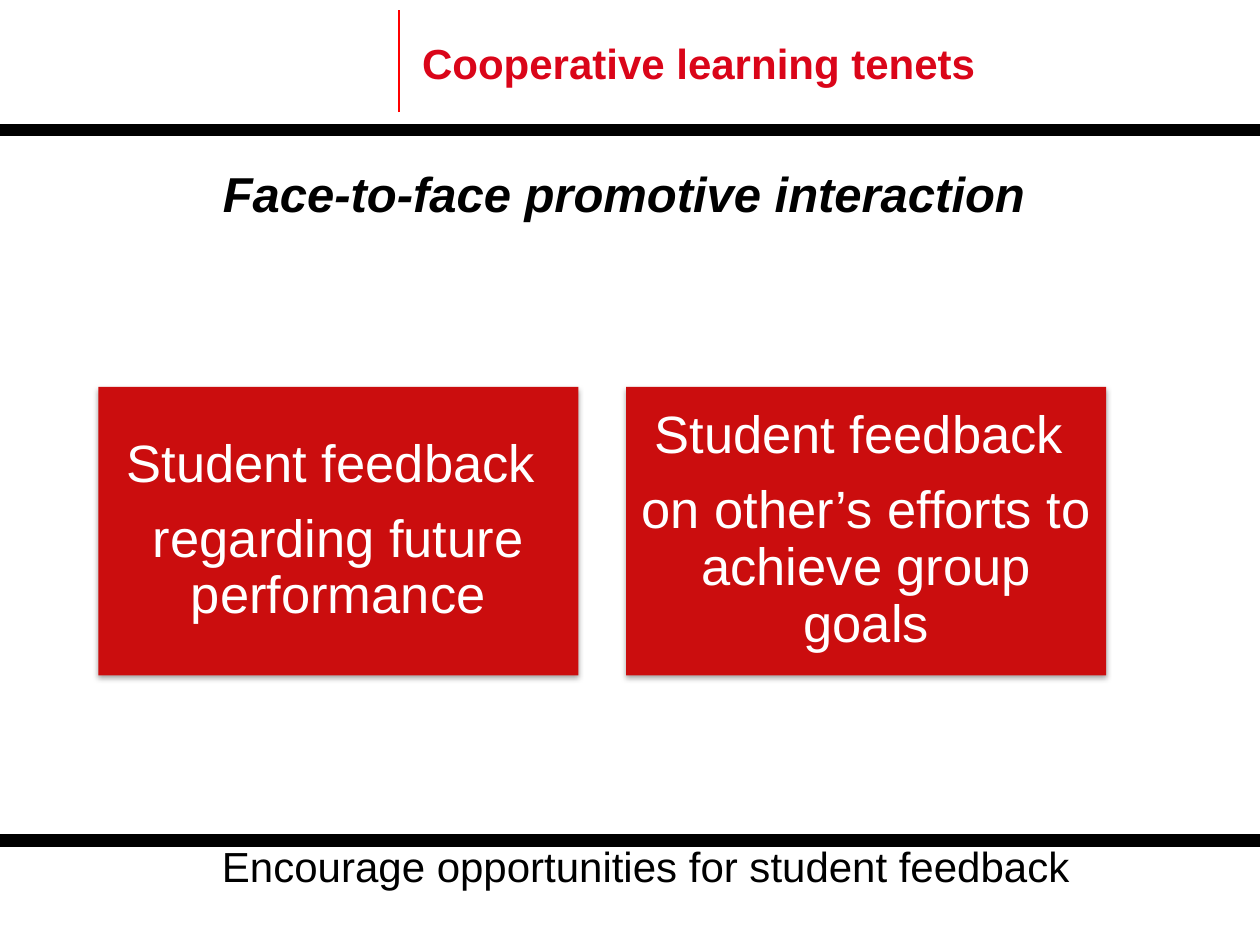
"""Build the cooperative learning slide on face-to-face promotive interaction."""
from lxml.etree import SubElement
from pptx import Presentation
from pptx.dml.color import RGBColor
from pptx.enum.shapes import MSO_CONNECTOR, MSO_SHAPE
from pptx.enum.text import MSO_ANCHOR as Anchor, MSO_AUTO_SIZE as AutoSize, PP_ALIGN as Align
from pptx.oxml import parse_xml
from pptx.oxml.ns import nsdecls, qn
from pptx.util import Inches, Pt

TITLE = "Cooperative learning tenets"
SUBTITLE = "Face-to-face promotive interaction"
CARDS = [
    ("Student feedback ", "regarding future performance"),
    ("Student feedback ", "on other’s efforts to achieve group goals"),
]
FOOTER = "Encourage opportunities for student feedback"
RULES = [
    ((3.17, 0.89), (3.17, 0.08), "accent", 1.25),
    ((-0.02, 1.03), (10.01, 1.03), "text", 7),
    ((0, 6.67), (10.03, 6.67), "text", 7),
]
THEME = {
    "font": "Arial",
    "colors": {"accent": "FF0000", "title": "DA0519", "text": "000000",
               "card": "CB0D0E", "card_text": "FFFFFF"},
    "sizes": {"title": 24, "subtitle": 28, "card": 30, "footer": 24},
}
CARD_LEFT, CARD_TOP, CARD_W, CARD_H, CARD_GAP = 0.78, 3.07, 3.81, 2.29, 0.38
CARD_INSET = 0.12
SHADOW = (
    f'<a:effectLst {nsdecls("a")}><a:outerShdw blurRad="{Pt(3.1)}" dist="{Pt(1.8)}" '
    'dir="5400000" rotWithShape="0"><a:srgbClr val="000000"><a:alpha val="35000"/>'
    '</a:srgbClr></a:outerShdw></a:effectLst>'
)


def color(name):
    return RGBColor.from_string(THEME["colors"][name])


def add_run(p, text, size, shade, bold=False, italic=False):
    r = p.add_run()
    r.text = text
    r.font.name = THEME["font"]
    r.font.size = Pt(THEME["sizes"][size])
    r.font.color.rgb = color(shade)
    r.font.bold, r.font.italic = bold, italic


def fill_label(sp, box, text, size, shade, align=Align.LEFT, wrap=False, **style):
    sp.left, sp.top, sp.width, sp.height = map(Inches, box)
    tf = sp.text_frame
    tf.word_wrap = wrap
    tf.auto_size = AutoSize.SHAPE_TO_FIT_TEXT
    tf.vertical_anchor = Anchor.TOP
    p = tf.paragraphs[0]
    p.alignment = align
    p.space_before = Pt(0)
    add_run(p, text, size, shade, **style)


def add_label(s, box, *args, **kwargs):
    fill_label(s.shapes.add_textbox(*map(Inches, box)), box, *args, **kwargs)


def add_rule(s, start, end, shade, width):
    line = s.shapes.add_connector(MSO_CONNECTOR.STRAIGHT, *map(Inches, start + end))
    line.line.color.rgb = color(shade)
    line.line.width = Pt(width)
    SubElement(line._element.spPr, qn("a:effectLst"))


def add_card(s, left, lines):
    sp = s.shapes.add_shape(MSO_SHAPE.RECTANGLE, *map(Inches, (left, CARD_TOP, CARD_W, CARD_H)))
    sp.fill.solid()
    sp.fill.fore_color.rgb = color("card")
    sp.line.fill.background()
    sp._element.spPr.append(parse_xml(SHADOW))
    tf = sp.text_frame
    tf.word_wrap = True
    tf.vertical_anchor = Anchor.MIDDLE
    tf.margin_left = tf.margin_right = tf.margin_top = tf.margin_bottom = Inches(CARD_INSET)
    for i, text in enumerate(lines):
        p = tf.add_paragraph() if i else tf.paragraphs[0]
        p.alignment = Align.CENTER
        p.line_spacing = 0.9
        p.space_after = Pt(0.35 * THEME["sizes"]["card"])
        add_run(p, text, "card", "card_text")


def main():
    prs = Presentation()
    prs.slide_width, prs.slide_height = Inches(10), Inches(7.5)
    s = prs.slides.add_slide(prs.slide_layouts[5])
    for rule in RULES:
        add_rule(s, *rule)
    fill_label(s.shapes.title, (3.25, 0.25, 4.63, 0.5), TITLE, "title", "title", bold=True)
    add_label(s, (1.67, 1.25, 6.73, 0.57), SUBTITLE, "subtitle", "text", bold=True, italic=True)
    for i, lines in enumerate(CARDS):
        add_card(s, CARD_LEFT + i * (CARD_W + CARD_GAP), lines)
    add_label(s, (0.25, 6.62, 9.75, 0.5), FOOTER, "footer", "text", align=Align.CENTER, wrap=True)
    prs.save("out.pptx")


if __name__ == "__main__":
    main()
